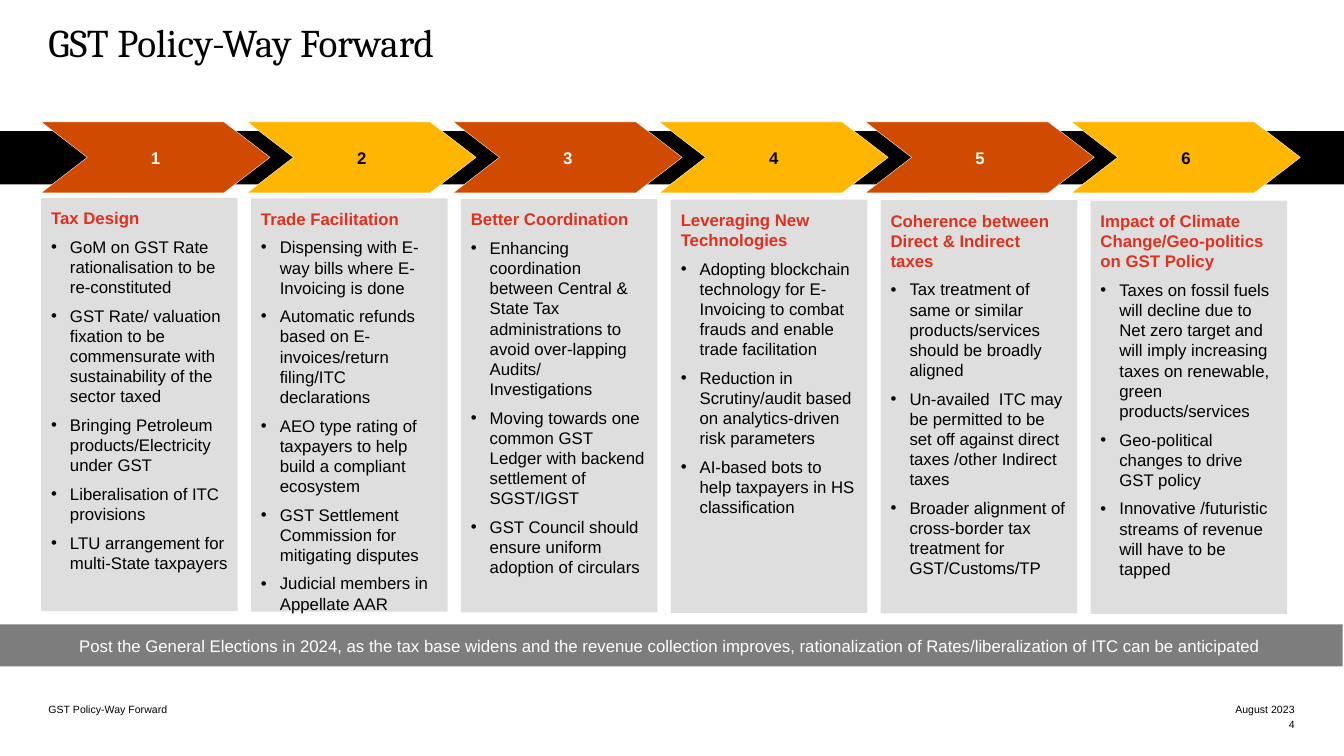
from pptx import Presentation
from pptx.dml.color import RGBColor
from pptx.enum.shapes import MSO_SHAPE as Shape
from pptx.enum.text import MSO_ANCHOR as Anchor, PP_ALIGN as Align
from pptx.oxml.ns import qn
from pptx.util import Pt
from lxml.etree import SubElement as Sub

WIDE, HIGH = 960, 540
BLACK, WHITE, RED = "000000", "FFFFFF", "E0301E"
TITLE = "GST Policy-Way Forward"
STEPS = [
    ("Tax Design", [
        "GoM on GST Rate rationalisation to be re-constituted",
        "GST Rate/ valuation fixation to be commensurate with sustainability of the sector taxed",
        "Bringing Petroleum products/Electricity under GST",
        "Liberalisation of ITC provisions",
        "LTU arrangement for multi-State taxpayers"]),
    ("Trade Facilitation", [
        "Dispensing with E-way bills where E-Invoicing is done",
        "Automatic refunds based on E-invoices/return filing/ITC declarations",
        "AEO type rating of taxpayers to help build a compliant ecosystem",
        "GST Settlement Commission for mitigating disputes",
        "Judicial members in Appellate AAR"]),
    ("Better Coordination", [
        "Enhancing coordination between Central & State Tax administrations "
        "to avoid over-lapping Audits/ Investigations",
        "Moving towards one common GST Ledger with backend settlement of SGST/IGST",
        "GST Council should ensure uniform adoption of circulars"]),
    ("Leveraging New Technologies", [
        "Adopting blockchain technology for E-Invoicing to combat frauds "
        "and enable trade facilitation",
        "Reduction in Scrutiny/audit based on analytics-driven risk parameters",
        "AI-based bots to help taxpayers in HS classification"]),
    ("Coherence between Direct & Indirect taxes", [
        "Tax treatment of same or similar products/services should be broadly aligned",
        "Un-availed  ITC may be permitted to be set off against direct taxes "
        "/other Indirect taxes",
        "Broader alignment of cross-border tax treatment for GST/Customs/TP"]),
    ("Impact of Climate Change/Geo-politics on GST Policy", [
        "Taxes on fossil fuels will decline due to Net zero target and will imply "
        "increasing taxes on renewable, green products/services",
        "Geo-political changes to drive GST policy",
        "Innovative /futuristic streams of revenue will have to be tapped"]),
]


def paint(obj, color):
    """Give a fill, or a font's fill, a solid colour."""
    obj.solid()
    obj.fore_color.rgb = RGBColor.from_string(color)


def assign(obj, **vals):
    for key, val in vals.items():
        setattr(obj, key, val)


def setup(frame, pad, anchor):
    assign(frame, word_wrap=True, vertical_anchor=anchor, margin_left=Pt(pad),
           margin_right=Pt(pad), margin_top=Pt(pad), margin_bottom=Pt(pad))


def write(para, text, color, size=12, bold=False, face="Arial", align=Align.LEFT):
    para.alignment = align
    run = para.add_run()
    run.text = text
    assign(run.font, size=Pt(size), bold=bold, name=face)
    paint(run.font.fill, color)


def block(slide, kind, box, color):
    """Flat shape with padded text."""
    shape = slide.shapes.add_shape(kind, *map(Pt, box))
    shape.shadow.inherit = False
    paint(shape.fill, color)
    shape.line.fill.background()
    setup(shape.text_frame, 7.2, Anchor.MIDDLE)
    return shape


def label(slide, box, text, anchor=Anchor.BOTTOM, **style):
    frame = slide.shapes.add_textbox(*map(Pt, box)).text_frame
    setup(frame, 0, anchor)
    write(frame.paragraphs[0], text, BLACK, **style)


def bullet(para, indent=13.5):
    props = para._p.get_or_add_pPr()
    props.set("marL", str(Pt(indent)))
    props.set("indent", str(-Pt(indent)))
    Sub(props, qn("a:buFont")).set("typeface", "Arial")
    Sub(props, qn("a:buChar")).set("char", "•")


def arrows(slide, box):
    """Numbered chevrons on a black band."""
    left, top, width, height = box
    block(slide, Shape.RECTANGLE, (0, top + 6.5, WIDE, 38.2), BLACK)
    pitch, wide = 147.2, width - 147.2 * (len(STEPS) - 1)
    for i in range(len(STEPS)):
        fill, ink = (("D04A02", WHITE), ("FFB600", BLACK))[i % 2]
        arrow = block(slide, Shape.CHEVRON, (left + i * pitch, top, wide, height), fill)
        arrow.adjustments[0] = 0.65
        paint(arrow.line.fill, WHITE)
        arrow.line.width = Pt(0.25)
        write(arrow.text_frame.paragraphs[0], str(i + 1), ink, bold=True,
              align=Align.CENTER)


def panel(slide, box, head, items):
    """Grey column with a heading and bullets."""
    frame = block(slide, Shape.RECTANGLE, box, "DEDEDE").text_frame
    frame.vertical_anchor = Anchor.TOP
    para = frame.paragraphs[0]
    write(para, head, RED, bold=True)
    para.space_after = Pt(6)
    for item in items:
        para = frame.add_paragraph()
        para.space_after = Pt(6)
        bullet(para)
        write(para, item, BLACK)


def panels(slide, box):
    """Columns at an equal pitch, each slightly lower than the last."""
    left, top, width, height = box
    wide = 140.4
    pitch = (width - wide) / (len(STEPS) - 1)
    for i, (head, items) in enumerate(STEPS):
        panel(slide, (left + i * pitch, top + 0.4 * i, wide, height), head, items)


def banner(slide, box):
    bar = block(slide, Shape.RECTANGLE, box, "7D7D7D")
    write(bar.text_frame.paragraphs[0],
          "Post the General Elections in 2024, as the tax base widens and the revenue "
          "collection improves, rationalization of Rates/liberalization of ITC can be "
          "anticipated", WHITE, align=Align.CENTER)


def footer(slide, box):
    left, top, width, height = box
    row, side = height / 2, 139
    right = left + width - side
    label(slide, (left, top, 431, row), TITLE, size=7.5)
    for i, text in enumerate(("August 2023", "4")):
        label(slide, (right, top + i * row, side, row), text, size=7.5,
              align=Align.RIGHT)


def main():
    deck = Presentation()
    assign(deck, slide_width=Pt(WIDE), slide_height=Pt(HIGH))
    slide = deck.slides.add_slide(deck.slide_layouts[6])
    label(slide, (34.6, 13, 890, 34), TITLE, Anchor.TOP, size=28, face="Cambria")
    arrows(slide, (29.5, 87.1, 899.4, 50.6))
    panels(slide, (29.4, 141.4, 890, 295.2))
    banner(slide, (-1.4, 446, 960.4, 30))
    footer(slide, (34.6, 500.4, 890.2, 21.6))
    deck.save("out.pptx")


if __name__ == "__main__":
    main()
